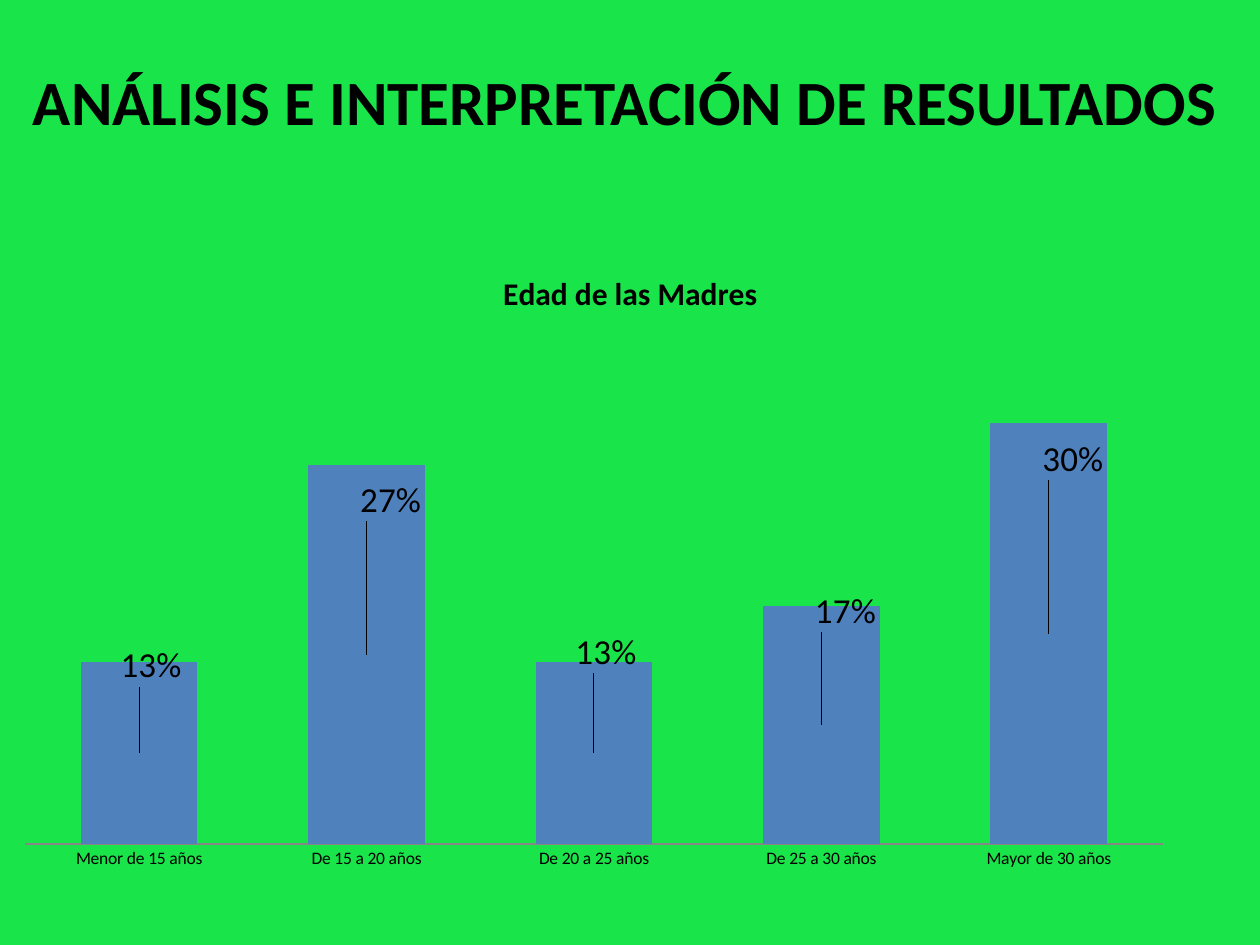
from dataclasses import dataclass

from pptx import Presentation
from pptx import util as u
from pptx.chart.data import CategoryChartData
from pptx.dml.color import RGBColor
from pptx.enum import chart as ch
from pptx.enum import text
from pptx.oxml import parse_xml
from pptx.oxml.ns import nsdecls, qn

FONT = "Calibri"
HUES = {"back": "19E54A", "ink": "000000", "bar": "4F81BD", "axis": "868686"}


@dataclass
class Group:
    """One age group; dx and dy shift its label, as shares of the chart."""
    name: str
    share: float
    dx: float
    dy: float


GROUPS = [
    Group("Menor de 15 años", 0.13, 0.01, -0.13),
    Group("De 15 a 20 años", 0.27, 0.02, -0.23),
    Group("De 20 a 25 años", 0.13, 0.01, -0.15),
    Group("De 25 a 30 años", 0.17, 0.02, -0.17),
    Group("Mayor de 30 años", 0.30, 0.02, -0.26),
]


def hue(key: str) -> RGBColor:
    return RGBColor.from_string(HUES[key])


def style(font, size: int, bold: bool = False) -> None:
    font.name, font.size, font.bold = FONT, u.Pt(size), bold
    font.color.rgb = hue("ink")


def layout(**parts):
    """Make a manual chart layout from its child values, in schema order."""
    tags = "".join(f'<c:{key} val="{val}"/>' for key, val in parts.items())
    return parse_xml(f'<c:layout {nsdecls("c")}><c:manualLayout>{tags}'
                     "</c:manualLayout></c:layout>")


def add_title(slide) -> None:
    title = slide.shapes.title
    title.left, title.top = u.Cm(-0.1), u.Cm(1.12)
    title.width, title.height = u.Cm(25.4), u.Cm(1.8)
    frame = title.text_frame
    frame.text = "ANÁLISIS E INTERPRETACIÓN DE RESULTADOS"
    frame.word_wrap = True
    frame.vertical_anchor = text.MSO_ANCHOR.MIDDLE
    para = frame.paragraphs[0]
    para.alignment = text.PP_ALIGN.CENTER
    style(para.runs[0].font, 36, True)


def add_bars(slide):
    data = CategoryChartData(number_format="0%")
    data.categories = [group.name for group in GROUPS]
    data.add_series("Series 1", [group.share for group in GROUPS])
    chart = slide.shapes.add_chart(
        ch.XL_CHART_TYPE.COLUMN_STACKED, u.Cm(0.5), u.Cm(4.95),
        u.Cm(24.4), u.Cm(13.56), data).chart
    style(chart.font, 10)
    chart.has_legend = False
    chart.has_title = True
    head = chart.chart_title.text_frame
    head.text = "Edad de las Madres"
    style(head.paragraphs[0].runs[0].font, 18, True)

    plot = chart.plots[0]
    plot.gap_width, plot.overlap = 95, 100
    plot.vary_by_categories = False
    fill = plot.series[0].format.fill
    fill.solid()
    fill.fore_color.rgb = hue("bar")
    return chart


def set_axes(chart) -> None:
    cat, val = chart.category_axis, chart.value_axis
    cat.major_tick_mark = ch.XL_TICK_MARK.NONE
    cat.format.line.color.rgb = hue("axis")
    val.minimum_scale, val.maximum_scale = 0, 0.35
    val.has_major_gridlines = False
    val.tick_labels.number_format = "0%"
    val.tick_labels.number_format_is_linked = False
    val.visible = False

    area = chart.element.xpath("c:chart/c:plotArea")[0]
    for old in area.findall(qn("c:layout")):
        area.remove(old)
    area.insert(0, layout(layoutTarget="inner", xMode="edge", yMode="edge",
                          x=0, y=0.16, w=0.94, h=0.73))


def set_labels(chart) -> None:
    points = chart.plots[0].series[0].points
    for spot in range(len(GROUPS)):
        style(points[spot].data_label.font, 20)
    for tag, group in zip(chart.element.xpath(".//c:dLbl"), GROUPS):
        tag.insert(1, layout(x=group.dx, y=group.dy))


def main() -> None:
    deck = Presentation()
    deck.slide_width, deck.slide_height = u.Cm(25.4), u.Cm(19.05)
    slide = deck.slides.add_slide(deck.slide_layouts[5])
    back = slide.background.fill
    back.solid()
    back.fore_color.rgb = hue("back")
    add_title(slide)
    chart = add_bars(slide)
    set_axes(chart)
    set_labels(chart)
    deck.save("out.pptx")


if __name__ == "__main__":
    main()
